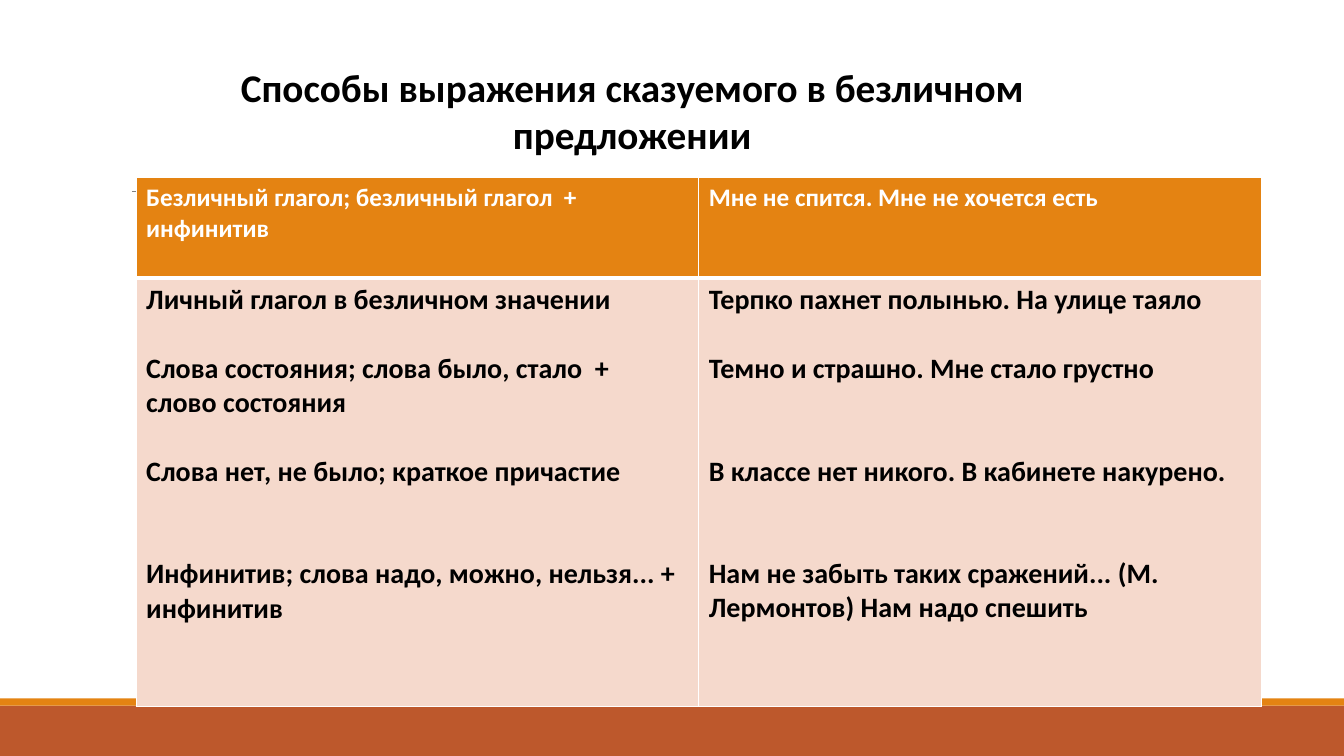
from dataclasses import dataclass

from lxml import etree
from pptx import Presentation
from pptx.dml.color import RGBColor
from pptx.enum.shapes import MSO_CONNECTOR, MSO_SHAPE
from pptx.enum.text import PP_ALIGN
from pptx.oxml.ns import qn
from pptx.util import Emu, Pt

RECT = MSO_SHAPE.RECTANGLE
STRAIGHT = MSO_CONNECTOR.STRAIGHT
CENTER = PP_ALIGN.CENTER

FONT = "Calibri"
WHITE, BLACK, GREY = "FFFFFF", "000000", "808080"
ORANGE, RUST, PEACH = "E48312", "BD582C", "F5D9CC"
BODY_LINE = 24.4  # height of one body line, points


@dataclass
class Band:
    top: int
    height: int
    color: str


@dataclass
class Para:
    text: str
    gap: int = 0  # empty lines above


@dataclass
class Row:
    height: int
    size: int
    color: str
    fill: str
    borders: dict[str, float]
    cells: list[list[Para]]


BANDS = [Band(700, 50, RUST), Band(693, 7, ORANGE)]

ROWS = [
    Row(100, 18, WHITE, ORANGE, {"lnL": 1, "lnR": 1, "lnT": 1, "lnB": 3}, [
        [Para("Безличный глагол; безличный глагол  +  инфинитив")],
        [Para("Мне не спится. Мне не хочется есть")],
    ]),
    Row(425, 20, BLACK, PEACH, {"lnL": 1, "lnR": 1, "lnT": 3, "lnB": 1}, [
        [
            Para("Личный глагол в безличном значении"),
            Para("Слова состояния; слова было, стало  +  слово состояния", 1),
            Para("Слова нет, не было; краткое причастие", 1),
            Para("Инфинитив; слова надо, можно, нельзя... + инфинитив", 2),
        ],
        [
            Para("Терпко пахнет полынью. На улице таяло"),
            Para("Темно и страшно. Мне стало грустно", 1),
            Para("В классе нет никого. В кабинете накурено.", 2),
            Para("Нам не забыть таких сражений... (М. Лермонтов) Нам надо спешить", 2),
        ],
    ]),
]


def px(n: int) -> Emu:
    """100 px to the inch."""
    return Emu(n * 9144)


def rgb(color: str) -> RGBColor:
    return RGBColor.from_string(color)


def style(p, size: int, color: str) -> None:
    p.font.name = FONT
    p.font.size = Pt(size)
    p.font.bold = True
    p.font.color.rgb = rgb(color)


def add_band(s, band: Band) -> None:
    sp = s.shapes.add_shape(RECT, 0, px(band.top), px(1333), px(band.height))
    sp.shadow.inherit = False
    sp.fill.solid()
    sp.fill.fore_color.rgb = rgb(band.color)
    sp.line.fill.background()


def add_rule(s, left: int, right: int, y: int) -> None:
    ln = s.shapes.add_connector(STRAIGHT, px(left), px(y), px(right), px(y))
    ln.line.color.rgb = rgb(GREY)
    ln.line.width = Pt(0.5)
    etree.SubElement(ln._element.spPr, qn("a:effectLst"))


def add_border(cell, side: str, width: float) -> None:
    ln = etree.SubElement(cell._tc.get_or_add_tcPr(), qn(f"a:{side}"), w=str(Pt(width)))
    fill = etree.SubElement(ln, qn("a:solidFill"))
    etree.SubElement(fill, qn("a:srgbClr"), val=WHITE)


def fill_cell(cell, row: Row, paras: list[Para]) -> None:
    for side, width in row.borders.items():
        add_border(cell, side, width)
    cell.fill.solid()
    cell.fill.fore_color.rgb = rgb(row.fill)
    tf = cell.text_frame
    for i, para in enumerate(paras):
        p = tf.add_paragraph() if i else tf.paragraphs[0]
        p.text = para.text
        p.space_before = Pt(para.gap * BODY_LINE)
        style(p, row.size, row.color)


def add_grid(s, left: int, top: int, col_width: int) -> None:
    cols = len(ROWS[0].cells)
    height = sum(row.height for row in ROWS)
    table = s.shapes.add_table(len(ROWS), cols, px(left), px(top),
                               px(col_width * cols), px(height)).table
    for col in table.columns:
        col.width = px(col_width)
    for r, row in enumerate(ROWS):
        table.rows[r].height = px(row.height)
        for c, paras in enumerate(row.cells):
            fill_cell(table.cell(r, c), row, paras)


def add_title(s, text: str) -> None:
    tf = s.shapes.add_textbox(px(159), px(58), px(936), px(104)).text_frame
    tf.word_wrap = True
    p = tf.paragraphs[0]
    p.text = text
    p.alignment = CENTER
    style(p, 28, BLACK)


def main() -> None:
    prs = Presentation()
    prs.slide_width, prs.slide_height = px(1333), px(750)
    s = prs.slides.add_slide(prs.slide_layouts[6])

    # Footer bands and rule behind the table
    for band in BANDS:
        add_band(s, band)
    add_rule(s, 131, 1221, 190)

    # Table and title
    add_grid(s, 135, 176, 558)
    add_title(s, "Способы выражения сказуемого в безличном предложении")

    prs.save("out.pptx")


if __name__ == "__main__":
    main()
